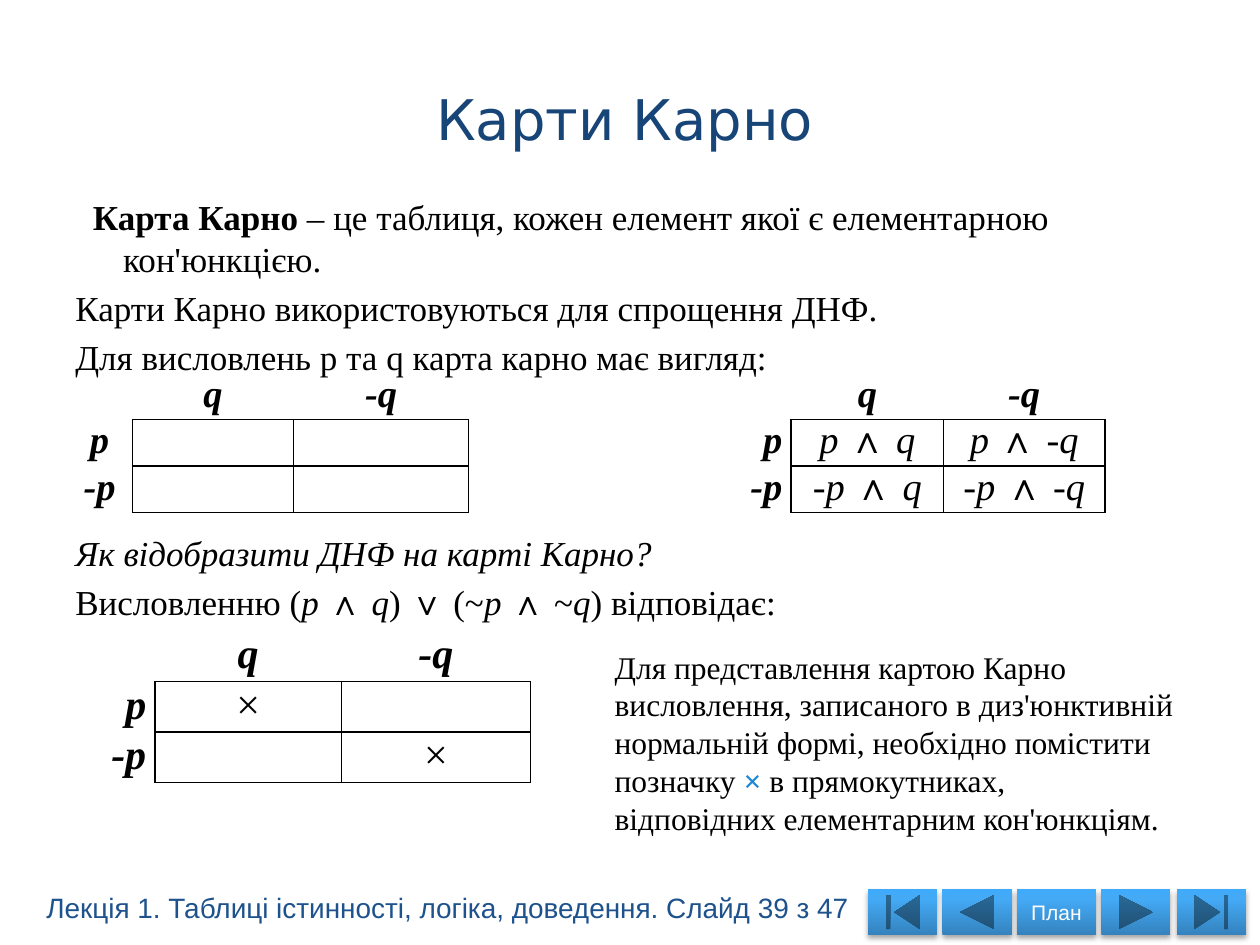
"""Build the lecture slide about Karnaugh maps."""
from lxml import etree
from pptx import Presentation
from pptx.dml.color import RGBColor
from pptx.enum.shapes import MSO_SHAPE
from pptx.enum.text import MSO_ANCHOR, PP_ALIGN
from pptx.oxml import parse_xml
from pptx.util import Inches, Pt

LEFT, CENTER, RIGHT = PP_ALIGN.LEFT, PP_ALIGN.CENTER, PP_ALIGN.RIGHT
MIDDLE = MSO_ANCHOR.MIDDLE
FIRST, BACK = MSO_SHAPE.ACTION_BUTTON_BEGINNING, MSO_SHAPE.ACTION_BUTTON_BACK_OR_PREVIOUS
PLAN, NEXT = MSO_SHAPE.ACTION_BUTTON_CUSTOM, MSO_SHAPE.ACTION_BUTTON_FORWARD_OR_NEXT
LAST = MSO_SHAPE.ACTION_BUTTON_END
BLACK, WHITE = RGBColor(0, 0, 0), RGBColor(0xFF, 0xFF, 0xFF)
TITLE_BLUE, FOOTER_BLUE = RGBColor(0x17, 0x45, 0x78), RGBColor(0x1D, 0x52, 0x8D)
MARK_BLUE = RGBColor(0x1D, 0x87, 0xD6)
SERIF, SANS, TITLE_FONT = "Times New Roman", "Arial", "DejaVu Sans"
BOLD, ITALIC, PLAIN = {"bold": True}, {"italic": True}, {}
LABEL = {"bold": True, "italic": True}
NS = 'xmlns:a="http://schemas.openxmlformats.org/drawingml/2006/main"'

deck = Presentation()
deck.slide_width, deck.slide_height = Inches(10), Inches(7.5)
UNIT = deck.slide_width // 100
slide = deck.slides.add_slide(deck.slide_layouts[6])


def grid(*units):
    return [int(unit * UNIT) for unit in units]


def write(paragraph, runs, size, color=BLACK, font=SERIF, align=LEFT):
    paragraph.alignment = align
    for text, style in runs:
        run = paragraph.add_run()
        run.text = text
        run.font.color.rgb = color
        for name, value in {"size": Pt(size), "name": font, **style}.items():
            setattr(run.font, name, value)


title = slide.shapes.add_textbox(*grid(6.7, 6.3, 85.8, 6.2)).text_frame
title.word_wrap, title.vertical_anchor = True, MIDDLE
write(title.paragraphs[0], [("Карти Карно", PLAIN)], 32, TITLE_BLUE, TITLE_FONT, CENTER)

statements = [
    ([("Карта Карно ", BOLD), ("– ", ITALIC),
      ("це таблиця, кожен елемент якої є елементарною кон'юнкцією.", PLAIN)], 0, 3.8, -2.4),
    ([("Карти Карно використовуються для спрощення ДНФ.", PLAIN)], 4, 3.8, -3.8),
    ([("Для висловлень р та q карта карно має вигляд:", PLAIN)], 4, 3.8, -3.8),
    ([("Як відобразити ДНФ на карті Карно?", ITALIC)], 88, 0, 0),
    ([("Висловленню (", PLAIN), ("р", ITALIC), (" ∧ ", PLAIN), ("q", ITALIC),
      (") ∨ (~", PLAIN), ("р", ITALIC), (" ∧ ~", PLAIN), ("q", ITALIC),
      (") відповідає:", PLAIN)], 4, 0, 0),
]
body = slide.shapes.add_textbox(*grid(5, 15, 90, 36)).text_frame
body.word_wrap = True
for index, (runs, before, margin, indent) in enumerate(statements):
    paragraph = body.add_paragraph() if index else body.paragraphs[0]
    paragraph.space_before = Pt(before)
    margin_units, indent_units = grid(margin, indent)
    properties = paragraph._p.get_or_add_pPr()
    properties.set("marL", str(margin_units))
    properties.set("indent", str(indent_units))
    write(paragraph, runs, 20)

conjunctions = {
    (row, column): ([(p + " ", ITALIC), ("∧", PLAIN), (" " + q, ITALIC)], CENTER)
    for row, p in ((1, "р"), (2, "-р")) for column, q in ((4, "q"), (5, "-q"))
}
cross = ([("×", PLAIN)], CENTER)
maps = [
    (grid(5.3, 29.6), [5.2, 12.8, 13.9, 25.6, 12.1, 12.8], 22,
     {0: CENTER, 3: RIGHT}, conjunctions),
    (grid(7.5, 50.1), [4.8, 14.8, 15], 24, {0: RIGHT}, {(1, 1): cross, (2, 2): cross}),
]
for corner, widths, size, label_columns, contents in maps:
    contents = dict(contents)
    for start, align in label_columns.items():
        for step, suffix in ((1, ""), (2, "-")):
            contents[0, start + step] = ([(suffix + "q", LABEL)], CENTER)
            contents[step, start] = ([(suffix + "р", LABEL)], align)
    table = slide.shapes.add_table(
        3, len(widths), *corner, *grid(sum(widths), 11.1)).table
    table.first_row = table.horz_banding = False
    for column, width in zip(table.columns, grid(*widths)):
        column.width = width
    for row_index, row in enumerate(table.rows):
        row.height = grid(3.7)[0]
        for column_index, cell in enumerate(row.cells):
            cell.fill.background()
            cell.margin_top = cell.margin_bottom = 0
            cell.margin_left = cell.margin_right = grid(0.7)[0]
            runs, align = contents.get((row_index, column_index), ([], LEFT))
            write(cell.text_frame.paragraphs[0], runs, size, align=align)
            in_map = row_index > 0 and column_index not in label_columns
            edges = {
                "L": in_map or (row_index > 0 and column_index > 0),
                "R": in_map or (row_index > 0 and column_index + 1 < len(widths)),
                "T": in_map,
                "B": in_map or (row_index == 0 and column_index not in label_columns),
            }
            for position, (side, drawn) in enumerate(edges.items()):
                paint = ('<a:solidFill><a:srgbClr val="000000"/></a:solidFill>'
                         if drawn else "<a:noFill/>")
                cell._tc.get_or_add_tcPr().insert(position, etree.fromstring(
                    f'<a:ln{side} {NS} w="12700">{paint}</a:ln{side}>'))

advice_lines = [
    [("Для представлення картою Карно", PLAIN)],
    [("висловлення, записаного в диз'юнктивній", PLAIN)],
    [("нормальній формі, необхідно помістити", PLAIN)],
    [("позначку", PLAIN), (" × ", BOLD), ("в прямокутниках,", PLAIN)],
    [("відповідних елементарним кон'юнкціям.", PLAIN)],
]
advice = slide.shapes.add_textbox(*grid(47.8, 50.9, 47.4, 16.2)).text_frame
advice.word_wrap = False
for index, runs in enumerate(advice_lines):
    paragraph = advice.add_paragraph() if index else advice.paragraphs[0]
    write(paragraph, runs, 18)
advice.paragraphs[3].runs[1].font.color.rgb = MARK_BLUE

navigation = slide.shapes.add_group_shape()
buttons = [(FIRST, 68.9, 5.5), (BACK, 74.8, 5.5), (PLAN, 80.7, 6.3),
           (NEXT, 87.4, 5.5), (LAST, 93.4, 5.5)]
stops = "".join(f'<a:gs pos="{share}000"><a:srgbClr val="{color}"/></a:gs>'
                for share, color in ((0, "3483BE"), (80, "44AAF6"), (100, "40ABFB")))
for kind, left, width in buttons:
    button = navigation.shapes.add_shape(kind, *grid(left, 70.6, width, 3.6))
    button.line.fill.background()
    outline = button._element.spPr.find("{*}ln")
    outline.addprevious(parse_xml(
        f'<a:gradFill {NS} rotWithShape="1"><a:gsLst>{stops}</a:gsLst>'
        '<a:lin ang="16200000" scaled="0"/></a:gradFill>'))
    outline.addnext(parse_xml(
        f'<a:effectLst {NS}><a:outerShdw blurRad="39370" dist="22860" dir="5400000" '
        'rotWithShape="0"><a:srgbClr val="000000"><a:alpha val="35000"/></a:srgbClr>'
        '</a:outerShdw></a:effectLst>'))
    if kind == PLAN:
        caption = button.text_frame
        caption.word_wrap, caption.vertical_anchor = False, MIDDLE
        write(caption.paragraphs[0], [("План", PLAIN)], 12, WHITE, SANS, CENTER)

footer = slide.shapes.add_textbox(*grid(2.7, 70.2, 66.6, 3.7)).text_frame
footer.word_wrap = False
write(footer.paragraphs[0],
      [("Лекція 1. Таблиці істинності, логіка, доведення. Слайд 39 з 47", PLAIN)],
      16, FOOTER_BLUE, SANS)

deck.save("out.pptx")
